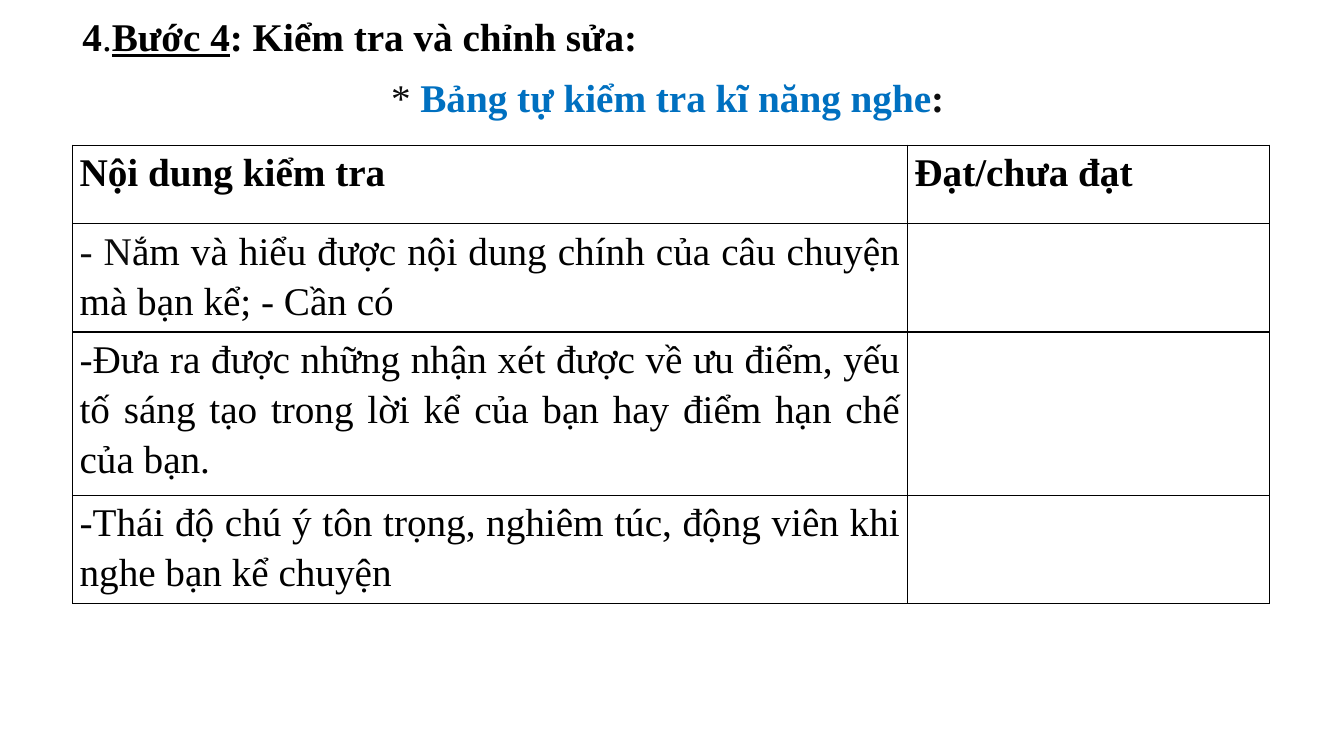
"""Build a slide with a self-check table for listening skills."""
from lxml import etree
from pptx import Presentation
from pptx.dml.color import RGBColor
from pptx.enum.text import MSO_AUTO_SIZE, PP_ALIGN
from pptx.oxml.ns import qn
from pptx.util import Inches, Pt

JUSTIFY = PP_ALIGN.JUSTIFY
GROW = MSO_AUTO_SIZE.SHAPE_TO_FIT_TEXT
FONT = "Times New Roman"
COLORS = {"black": "000000", "dark": "0D0D0D", "blue": "0070C0"}


def write(para, parts):
    para.alignment = JUSTIFY
    para.line_spacing = 1.15
    for text, color, bold, under in parts:
        run = para.add_run()
        run.text = text
        font = run.font
        font.name = FONT
        font.size = Pt(28)
        font.bold = bold
        font.underline = under
        font.color.rgb = RGBColor.from_string(COLORS[color])


def frame(cell):
    props = cell._tc.get_or_add_tcPr()
    for side in ("a:lnL", "a:lnR", "a:lnT", "a:lnB"):
        line = etree.SubElement(props, qn(side), w=str(Pt(1)))
        fill = etree.SubElement(line, qn("a:solidFill"))
        etree.SubElement(fill, qn("a:srgbClr"), val=COLORS["black"])
    cell.fill.background()


prs = Presentation()
prs.slide_width = Inches(13.33)
prs.slide_height = Inches(7.5)
slide = prs.slides.add_slide(prs.slide_layouts[6])

titles = [
    (0.72, 0, 5.76, [
        ("4", "black", True, False),
        (".", "black", False, False),
        ("Bước 4", "black", True, True),
        (": Kiểm tra và chỉnh sửa:", "black", True, False),
    ]),
    (3.78, 0.61, 5.75, [
        ("* ", "dark", False, False),
        ("Bảng tự kiểm tra kĩ năng nghe", "blue", True, False),
        (":", "dark", True, False),
    ]),
]
for left, top, width, parts in titles:
    box = slide.shapes.add_textbox(
        Inches(left), Inches(top), Inches(width), Inches(0.61))
    box.text_frame.word_wrap = False
    box.text_frame.auto_size = GROW
    para = box.text_frame.paragraphs[0]
    para.space_after = Pt(10)
    write(para, parts)

rows = [
    [[("Nội dung kiểm tra", "black", True, False)],
     [("Đạt/chưa đạt", "black", True, False)]],
    [[("- N", "dark", False, False),
      ("ắm và hiểu được nội dung chính của câu chuyện mà bạn kể; - Cần có ",
       "black", False, False)], []],
    [[("-Đưa ra được những nhận xét được về ưu điểm, yếu tố sáng tạo "
       "trong lời kể của bạn hay điểm hạn chế của bạn.",
       "black", False, False)], []],
    [[("-Thái độ chú ý tôn trọng, nghiêm túc, động viên khi "
       "nghe bạn kể chuyện", "black", False, False)], []],
]
widths = [8.28, 3.59]
heights = [0.78, 1.07, 1.62, 1.07]
table = slide.shapes.add_table(
    len(rows), len(widths), Inches(0.72), Inches(1.44),
    Inches(sum(widths)), Inches(sum(heights))).table
table.first_row = False
table.horz_banding = False
for col, width in zip(table.columns, widths):
    col.width = Inches(width)
for r, (row, height) in enumerate(zip(rows, heights)):
    table.rows[r].height = Inches(height)
    for c, parts in enumerate(row):
        cell = table.cell(r, c)
        cell.margin_left = cell.margin_right = Inches(0.07)
        cell.margin_top = cell.margin_bottom = 0
        frame(cell)
        write(cell.text_frame.paragraphs[0], parts)

prs.save("out.pptx")
